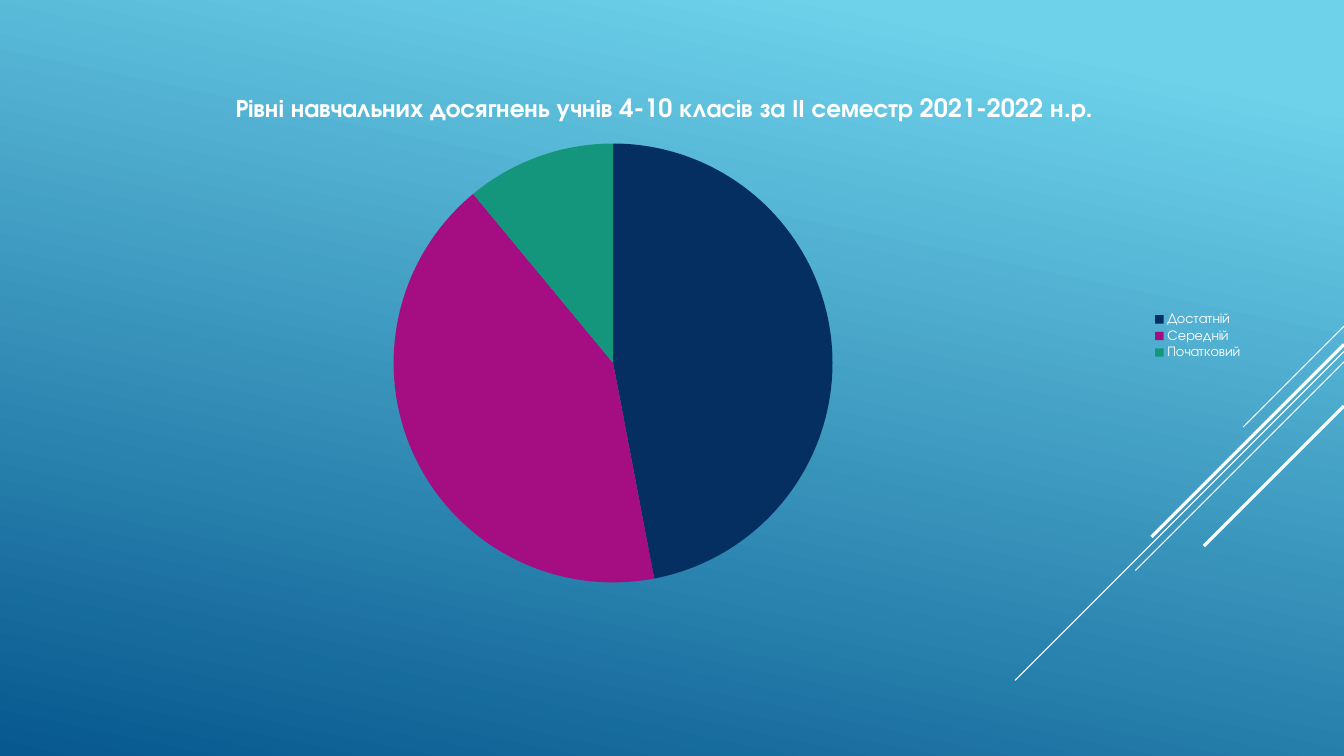
from dataclasses import dataclass

from lxml.etree import SubElement
from pptx import Presentation
from pptx.chart.data import CategoryChartData as ChartData
from pptx.dml.color import RGBColor as RGB
from pptx.enum.chart import XL_CHART_TYPE as Kind, XL_LEGEND_POSITION as Side
from pptx.enum.shapes import MSO_CONNECTOR as Link
from pptx.oxml.ns import qn
from pptx.util import Pt


@dataclass(frozen=True)
class Theme:
    """Colours, font and type sizes of the slide."""
    white: RGB = RGB(0xFF, 0xFF, 0xFF)
    sky: RGB = RGB(0x6E, 0xD2, 0xEB)
    deep: RGB = RGB(0x06, 0x58, 0x8E)
    navy: RGB = RGB(0x05, 0x2F, 0x61)
    plum: RGB = RGB(0xA5, 0x0E, 0x82)
    green: RGB = RGB(0x14, 0x96, 0x7C)
    font: str = "TeX Gyre Adventor"
    title: int = 18
    small: int = 10


THEME = Theme()
WIDTH, HEIGHT = 960, 540
TITLE = "Рівні навчальних досягнень учнів 4-10 класів за ІІ семестр 2021-2022 н.р."
LEVELS = [
    ("Достатній", 47, THEME.navy),
    ("Середній", 42, THEME.plum),
    ("Початковий", 11, THEME.green),
]
RAYS = [
    (233, 72, 0.75),
    (251, 235, 0.75),
    (258.5, 149, 0.75),
    (246, 137.5, 2.25),
    (290, 100, 2.25),
]


def paint(slide):
    """Fill the background with a slanted gradient."""
    fill = slide.background.fill
    fill.gradient()
    fill.gradient_angle = 360 - 102
    stops = [(0.1, THEME.sky), (1, THEME.deep)]
    for stop, (place, color) in zip(fill.gradient_stops, stops):
        stop.position = place
        stop.color.rgb = color


def add_ray(slide, top, reach, weight):
    """Draw a diagonal line down and left from the right edge."""
    ray = slide.shapes.add_connector(
        Link.STRAIGHT, Pt(WIDTH), Pt(top), Pt(WIDTH - reach), Pt(top + reach))
    ray.line.color.rgb = THEME.white
    ray.line.width = Pt(weight)
    SubElement(ray._element.spPr, qn("a:effectLst"))


def style(font, size, bold=False):
    """Set the theme font at a given size."""
    font.name = THEME.font
    font.size = Pt(size)
    font.bold = bold
    font.color.rgb = THEME.white


def add_pie(slide, left, top, width, height):
    """Add the pie chart with its title and legend."""
    data = ChartData()
    data.categories = [name for name, _, _ in LEVELS]
    data.add_series("Series 1", [value for _, value, _ in LEVELS])
    frame = slide.shapes.add_chart(
        Kind.PIE, Pt(left), Pt(top), Pt(width), Pt(height), data)
    chart = frame.chart
    style(chart.font, THEME.small)

    chart.has_title = True
    run = chart.chart_title.text_frame.paragraphs[0].add_run()
    run.text = TITLE
    style(run.font, THEME.title, True)
    chart.chart_title.include_in_layout = False

    chart.has_legend = True
    chart.legend.position = Side.RIGHT
    chart.legend.include_in_layout = False
    style(chart.legend.font, THEME.small)

    plot = chart.plots[0]
    plot.vary_by_categories = True
    for index, (_, _, color) in enumerate(LEVELS):
        slice_format = plot.series[0].points[index].format
        slice_format.fill.solid()
        slice_format.fill.fore_color.rgb = color
        slice_format.line.fill.background()


def main():
    """Build the slide and save it."""
    deck = Presentation()
    deck.slide_width, deck.slide_height = Pt(WIDTH), Pt(HEIGHT)
    slide = deck.slides.add_slide(deck.slide_layouts[6])
    paint(slide)
    for ray in RAYS:
        add_ray(slide, *ray)
    add_pie(slide, 54, 54, 841, 372)
    deck.save("out.pptx")


if __name__ == "__main__":
    main()
